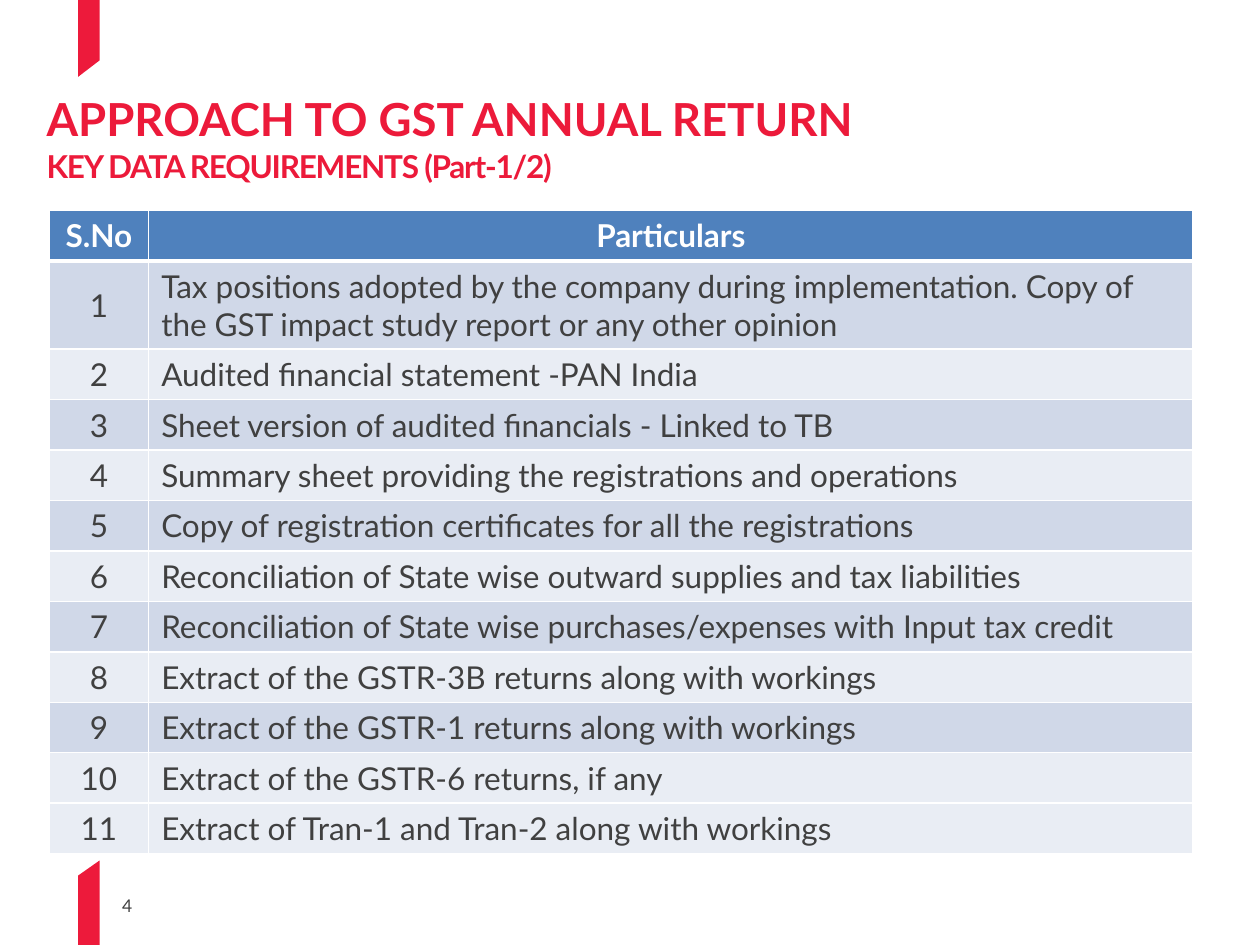
from lxml.etree import SubElement
from pptx import Presentation
from pptx.dml.color import RGBColor
from pptx.enum.text import MSO_ANCHOR, PP_ALIGN
from pptx.oxml.ns import qn
from pptx.util import Inches, Pt

FONT = "Lato"
COLORS = {
    "title": "EC1A3A",
    "ribbon": "ED1A3B",
    "text": "404040",
    "white": "FFFFFF",
    "head": "4F81BD",
    "odd": "D0D8E8",
    "even": "E9EDF4",
}
ITEMS = [
    "Tax positions adopted by the company during implementation. "
    "Copy of the GST impact study report or any other opinion",
    "Audited financial statement -PAN India",
    "Sheet version of audited financials - Linked to TB",
    "Summary sheet providing the registrations and operations",
    "Copy of registration certificates for all the registrations",
    "Reconciliation of State wise outward supplies and tax liabilities",
    "Reconciliation of State wise purchases/expenses with Input tax credit",
    "Extract of the GSTR-3B returns along with workings",
    "Extract of the GSTR-1 returns along with workings",
    "Extract of the GSTR-6 returns, if any",
    "Extract of Tran-1 and Tran-2 along with workings",
]


def color(name):
    return RGBColor.from_string(COLORS[name])


def write(para, text, size=18, tint="text", bold=False, align=PP_ALIGN.LEFT,
          before=0, track=0):
    """Put one formatted run in a paragraph; track is letter spacing in points."""
    para.alignment = align
    para.space_before = Pt(before)
    run = para.add_run()
    run.text = text
    font = run.font
    font.name, font.size, font.bold = FONT, Pt(size), bold
    font.color.rgb = color(tint)
    if track:
        font._element.set("spc", str(round(track * 100)))


def add_box(slide, left, top, width, height, anchor=MSO_ANCHOR.TOP):
    box = slide.shapes.add_textbox(
        Inches(left), Inches(top), Inches(width), Inches(height))
    frame = box.text_frame
    frame.word_wrap = True
    frame.vertical_anchor = anchor
    frame.margin_left = frame.margin_right = 0
    frame.margin_top = frame.margin_bottom = 0
    return frame


def add_ribbon(slide, edge, left_end, right_end):
    """Draw a bar from a slide edge to a slanted end."""
    left, right = 0.62, 0.79
    points = [(left, edge), (left, left_end), (right, right_end), (right, edge)]
    points = [(Inches(x), Inches(y)) for x, y in points]
    build = slide.shapes.build_freeform(*points[0], scale=1.0)
    build.add_line_segments(points[1:], close=True)
    shape = build.convert_to_shape()
    shape.shadow.inherit = False
    shape.fill.solid()
    shape.fill.fore_color.rgb = color("ribbon")
    shape.line.fill.background()


def add_title(slide):
    frame = add_box(slide, 0.37, 0.72, 9.07, 0.76)
    write(frame.paragraphs[0], "APPROACH TO GST ANNUAL RETURN",
          size=26, tint="title", bold=True)
    write(frame.add_paragraph(), "KEY DATA REQUIREMENTS (Part-1/2)",
          tint="title", bold=True, before=1.1, track=-0.7)


def set_border(cell, bottom):
    """Give a cell white edges, 1 pt wide except at the bottom."""
    props = cell._tc.get_or_add_tcPr()
    widths = {"a:lnL": 1, "a:lnR": 1, "a:lnT": 1, "a:lnB": bottom}
    for place, (tag, width) in enumerate(widths.items()):
        line = SubElement(props, qn(tag), w=str(Pt(width)))
        fill = SubElement(line, qn("a:solidFill"))
        SubElement(fill, qn("a:srgbClr"), val=COLORS["white"])
        props.insert(place, line)


def fill_cell(cell, text, fill, bottom=1, anchor=MSO_ANCHOR.MIDDLE, **style):
    cell.fill.solid()
    cell.fill.fore_color.rgb = color(fill)
    cell.vertical_anchor = anchor
    set_border(cell, bottom)
    write(cell.text_frame.paragraphs[0], text, **style)


def add_list(slide):
    widths = [0.79, 8.29]
    heights = [0.4, 0.69] + [0.4] * (len(ITEMS) - 1)
    table = slide.shapes.add_table(
        len(heights), len(widths), Inches(0.39), Inches(1.67),
        Inches(sum(widths)), Inches(sum(heights))).table
    for column, width in zip(table.columns, widths):
        column.width = Inches(width)
    for row, height in zip(table.rows, heights):
        row.height = Inches(height)

    for col, text in enumerate(["S.No", "Particulars"]):
        fill_cell(table.cell(0, col), text, "head", bottom=3,
                  anchor=MSO_ANCHOR.TOP, tint="white", bold=True,
                  align=PP_ALIGN.CENTER)
    last = len(ITEMS)
    for num, item in enumerate(ITEMS, 1):
        fill = "odd" if num % 2 and num < last else "even"
        fill_cell(table.cell(num, 0), str(num), fill, align=PP_ALIGN.CENTER)
        fill_cell(table.cell(num, 1), item, fill)


def main():
    deck = Presentation()
    deck.slide_width, deck.slide_height = Inches(10), Inches(7.5)
    slide = deck.slides.add_slide(deck.slide_layouts[6])
    add_ribbon(slide, 7.5, 6.95, 6.83)
    add_ribbon(slide, 0, 0.61, 0.48)
    number = add_box(slide, 0.97, 7.1, 0.45, 0.17, MSO_ANCHOR.BOTTOM)
    write(number.paragraphs[0], "4", size=10)
    add_list(slide)
    add_title(slide)
    deck.save("out.pptx")


if __name__ == "__main__":
    main()
